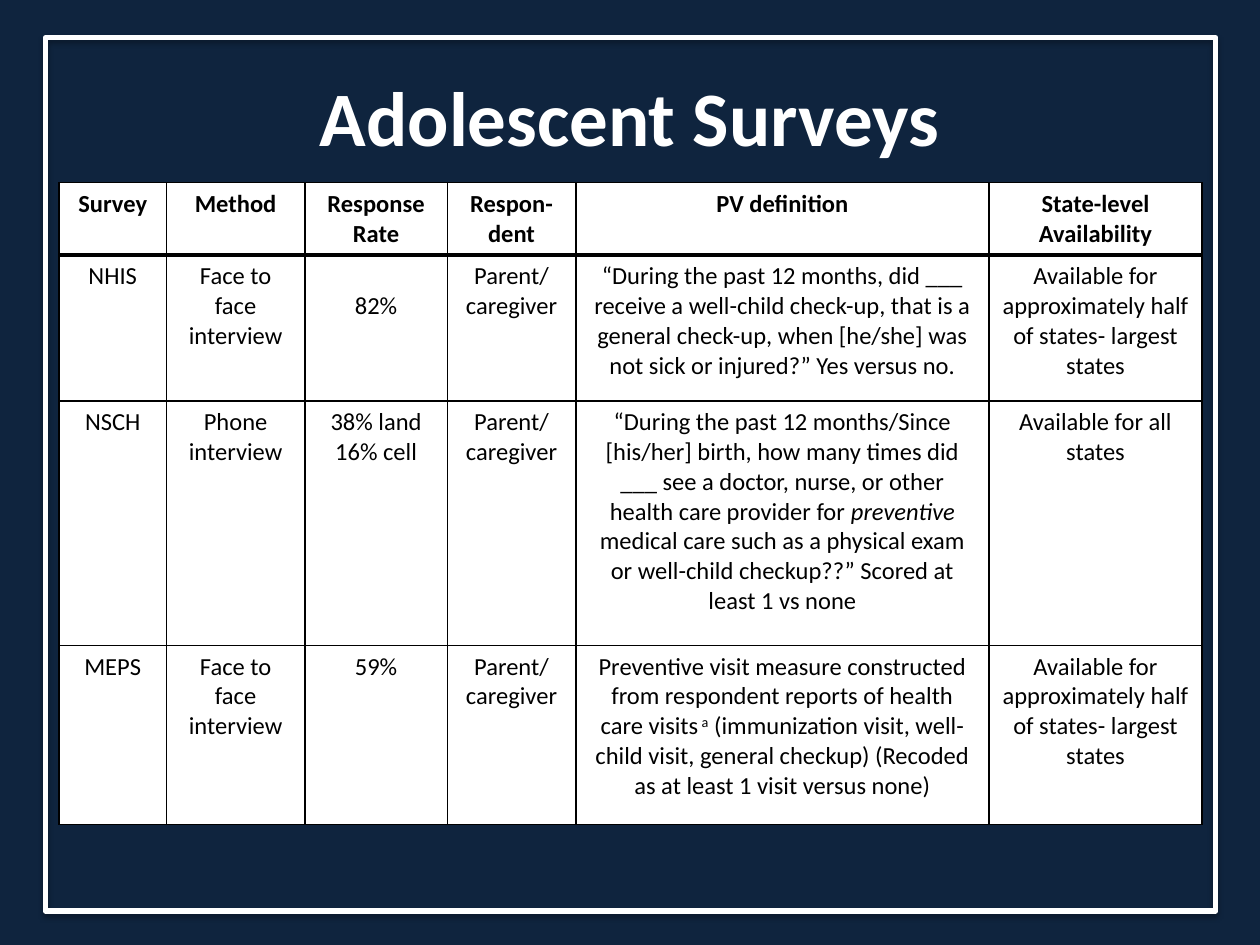
import pptx
import pptx.dml.color
import pptx.enum.shapes
import pptx.enum.text
import pptx.oxml
import pptx.oxml.ns
import pptx.util
from lxml import etree
from pptx.util import Inches

WHITE, BLACK = "FFFFFF", "000000"
CENTER = pptx.enum.text.PP_ALIGN.CENTER
DRAWING_NS = pptx.oxml.ns.nsdecls("a")


def rgb(value):
    return pptx.dml.color.RGBColor.from_string(value)


def add_border(cell, side, points):
    """Draw one side (L, R, T or B) of a table cell in black."""
    cell._tc.get_or_add_tcPr().append(pptx.oxml.parse_xml(
        f'<a:ln{side} {DRAWING_NS} w="{pptx.util.Pt(points)}">'
        f'<a:solidFill><a:srgbClr val="{BLACK}"/></a:solidFill></a:ln{side}>'))


prs = pptx.Presentation()
prs.slide_width, prs.slide_height = Inches(10), Inches(7.5)
slide = prs.slides.add_slide(prs.slide_layouts[5])

background = slide.background.fill
background.gradient()
background.gradient_angle = 90
for stop, (position, color) in zip(background.gradient_stops, [(0, "0F243E"), (0.19, "102640")]):
    stop.position = position
    stop.color.rgb = rgb(color)

# White frame with a soft shadow, behind everything else
frame = slide.shapes.add_shape(
    pptx.enum.shapes.MSO_SHAPE.RECTANGLE, Inches(0.36), Inches(0.3), Inches(9.29), Inches(6.93))
frame.fill.background()
frame.line.color.rgb = rgb(WHITE)
frame.line.width = pptx.util.Pt(3)
frame.shadow.inherit = False
effects = frame._element.spPr.find(pptx.oxml.ns.qn("a:effectLst"))
effects.append(etree.fromstring(
    f'<a:outerShdw {DRAWING_NS} blurRad="{pptx.util.Pt(3.1)}" dist="{pptx.util.Pt(1.8)}" '
    f'dir="5400000" rotWithShape="0"><a:srgbClr val="{BLACK}"><a:alpha val="35000"/>'
    '</a:srgbClr></a:outerShdw>'))
slide.shapes._spTree.insert(2, frame._element)

title = slide.shapes.title
title.left, title.top = Inches(0.75), Inches(0.5)
title.width, title.height = Inches(8.5), Inches(0.83)
title.text_frame.text = "Adolescent Surveys"
title.text_frame.vertical_anchor = pptx.enum.text.MSO_ANCHOR.MIDDLE
heading = title.text_frame.paragraphs[0]
heading.alignment = CENTER
heading.font.name = "Calibri"
heading.font.size = pptx.util.Pt(44)
heading.font.bold = True
heading.font.color.rgb = rgb(WHITE)

PARENT = "Parent/\ncaregiver"
HALF_OF_STATES = "Available for approximately half of states- largest states"
# A cell is a string, or a list of (text, style) runs
surveys = [
    ["Survey", "Method", "Response\nRate", "Respon-dent", "PV definition",
     "State-level Availability"],
    ["NHIS", "Face to face interview", "82%", PARENT,
     "“During the past 12 months, did ___ receive a well-child check-up, that is a general "
     "check-up, when [he/she] was not sick or injured?” Yes versus no.", HALF_OF_STATES],
    ["NSCH", "Phone interview", "38% land\n16% cell", PARENT,
     [("“During the past 12 months/Since [his/her] birth, how many times did ___ see a doctor, "
       "nurse, or other health care provider for ", ""),
      ("preventive ", "italic"),
      ("medical care such as a physical exam or well-child checkup??” Scored at least 1 vs none",
       "")], "Available for all states"],
    ["MEPS", "Face to face interview", "59%", PARENT,
     [("Preventive visit measure constructed from respondent reports of health care visits", ""),
      (" a", "superscript"),
      (" (immunization visit, well-child visit, general checkup) (Recoded as at least 1 visit "
       "versus none)", "")], HALF_OF_STATES],
]
column_widths = [0.85, 1.1, 1.13, 1.02, 3.28, 1.69]
row_heights = [0.57, 1.16, 1.94, 1.42]

table = slide.shapes.add_table(
    len(row_heights), len(column_widths), Inches(0.47), Inches(1.45),
    Inches(sum(column_widths)), Inches(sum(row_heights))).table
for column, width in zip(table.columns, column_widths):
    column.width = Inches(width)
for row, height in zip(table.rows, row_heights):
    row.height = Inches(height)

for r, survey in enumerate(surveys):
    for c, content in enumerate(survey):
        cell = table.cell(r, c)
        for side in "LRTB":
            under_header = (r, side) in [(0, "B"), (1, "T")]
            add_border(cell, side, 3 if under_header else 1)
        cell.fill.solid()
        cell.fill.fore_color.rgb = rgb(WHITE)
        cell.margin_left = cell.margin_right = Inches(0.1)
        cell.margin_top = cell.margin_bottom = Inches(0.05)
        if isinstance(content, str):
            cell.text_frame.text = content
        else:
            for text, style in content:
                run = cell.text_frame.paragraphs[0].add_run()
                run.text = text
                if style == "italic":
                    run.font.italic = True
                elif style == "superscript":
                    run.font._element.set("baseline", "30000")
        for paragraph in cell.text_frame.paragraphs:
            paragraph.alignment = CENTER
            paragraph.font.name = "Calibri"
            paragraph.font.size = pptx.util.Pt(14)
            paragraph.font.bold = r == 0
            paragraph.font.color.rgb = rgb(BLACK)

# The NHIS response rate sits one line lower than its neighbours
table.cell(1, 2).margin_top = Inches(0.29)

prs.save("out.pptx")
